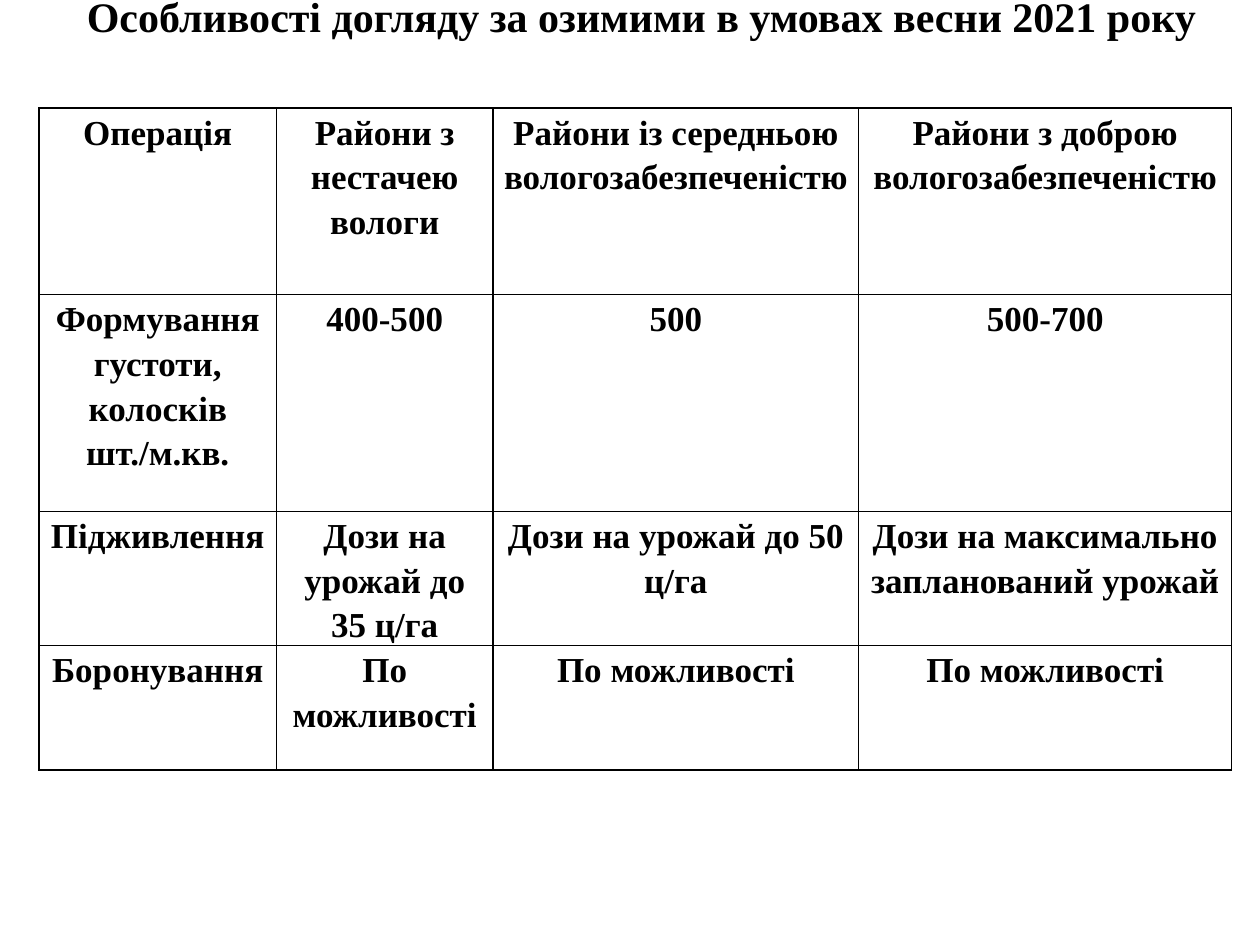
import pptx
import pptx.util
import pptx.dml.color
import pptx.enum.text
import pptx.oxml
import pptx.oxml.ns
from pptx.util import Cm, Pt

BLACK = pptx.dml.color.RGBColor(0, 0, 0)
FONT = "Times New Roman"
COL_WIDTHS = [4.78, 4.37, 7.37, 7.52]
ROW_HEIGHTS = [3.76, 4.37, 2.51, 2.51]
ROWS = [
    ["Операція", "Райони з нестачею вологи",
     "Райони із середньою вологозабезпеченістю",
     "Райони з доброю вологозабезпеченістю"],
    ["Формування густоти, колосків шт./м.кв.", "400-500", "500", "500-700"],
    ["Підживлення", "Дози на урожай до 35 ц/га",
     "Дози на урожай до 50 ц/га",
     "Дози на максимально запланований урожай"],
    ["Боронування"] + ["По можливості"] * 3,
]


def style_paragraph(p, size, align):
    p.alignment = align
    p.font.name = FONT
    p.font.size = Pt(size)
    p.font.bold = True
    p.font.color.rgb = BLACK


def add_borders(cell):
    tc_pr = cell._tc.get_or_add_tcPr()
    for i, side in enumerate(("lnL", "lnR", "lnT", "lnB")):
        ln = pptx.oxml.parse_xml(
            f'<a:{side} {pptx.oxml.ns.nsdecls("a")} w="{Pt(1)}">'
            f'<a:solidFill><a:srgbClr val="{BLACK}"/></a:solidFill></a:{side}>')
        tc_pr.insert(i, ln)


def place_title(s, left, top, width, height):
    sp = s.shapes.title
    sp.left, sp.top, sp.width, sp.height = left, top, width, height
    tf = sp.text_frame
    tf.text = "Особливості догляду за озимими в умовах весни 2021 року"
    tf.word_wrap = True
    tf.auto_size = pptx.enum.text.MSO_AUTO_SIZE.NONE
    tf.vertical_anchor = pptx.enum.text.MSO_ANCHOR.TOP
    tf.margin_left = Cm(1.75)
    tf.margin_right = 0
    tf.margin_top = Cm(0.18)
    style_paragraph(tf.paragraphs[0], 24, pptx.enum.text.PP_ALIGN.LEFT)


def fill_cell(cell, text):
    cell.text = text
    cell.fill.background()
    cell.margin_left = cell.margin_right = Cm(0.18)
    cell.margin_top = cell.margin_bottom = 0
    p = cell.text_frame.paragraphs[0]
    p.line_spacing = 1.15
    style_paragraph(p, 20, pptx.enum.text.PP_ALIGN.CENTER)
    add_borders(cell)


def add_care_table(s, left, top):
    frame = s.shapes.add_table(len(ROWS), len(COL_WIDTHS), left, top,
                               Cm(sum(COL_WIDTHS)), Cm(sum(ROW_HEIGHTS)))
    table = frame.table
    table.first_row = table.horz_banding = False
    for column, width in zip(table.columns, COL_WIDTHS):
        column.width = Cm(width)
    for row, height, texts in zip(table.rows, ROW_HEIGHTS, ROWS):
        row.height = Cm(height)
        for cell, text in zip(row.cells, texts):
            fill_cell(cell, text)


def main():
    prs = pptx.Presentation()
    prs.slide_width, prs.slide_height = Cm(25.4), Cm(19.05)
    s = prs.slides.add_slide(prs.slide_layouts.get_by_name("Title Only"))
    add_care_table(s, Cm(0.79), Cm(2.18))
    place_title(s, 0, Cm(-0.38), Cm(24.61), Cm(2.06))
    prs.save("out.pptx")


if __name__ == "__main__":
    main()
